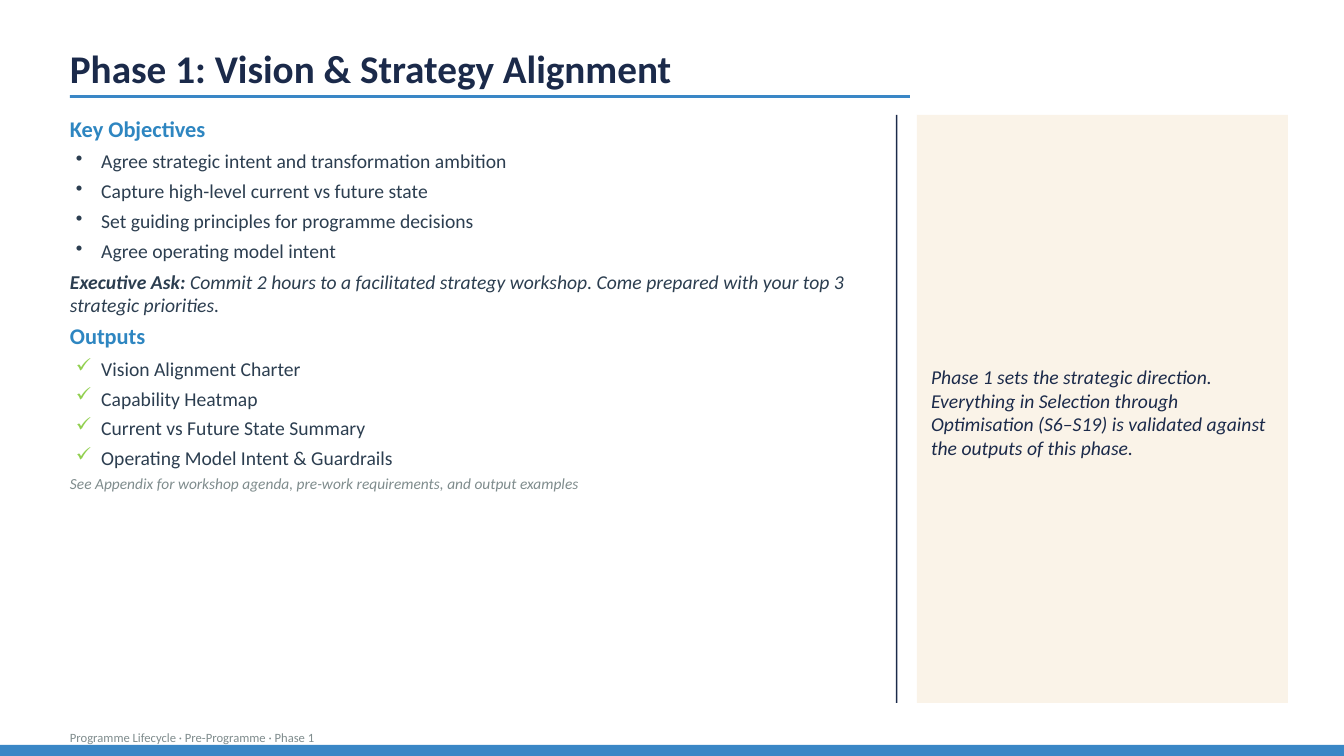
from pptx import Presentation
from pptx.dml.color import RGBColor
from pptx.enum.shapes import MSO_SHAPE
from pptx.enum.text import MSO_ANCHOR, PP_ALIGN
from pptx.util import Inches, Pt
from lxml.etree import SubElement
from pptx.oxml.ns import qn

NAVY = RGBColor(0x1B, 0x2A, 0x4A)
BLUE = RGBColor(0x3A, 0x87, 0xC6)
HEAD = RGBColor(0x2E, 0x86, 0xC1)
INK = RGBColor(0x2C, 0x3E, 0x50)
GREY = RGBColor(0x7F, 0x8C, 0x8D)
CREAM = RGBColor(0xFA, 0xF3, 0xE8)
GREEN = RGBColor(0x92, 0xD0, 0x50)

WIDTH, HEIGHT = Inches(13.333), Inches(7.5)
COLS, ROWS = 96, 54
LEFT, TOP, DEPTH = 5, 8.2, 42

GOALS = [
    "Agree strategic intent and transformation ambition",
    "Capture high-level current vs future state",
    "Set guiding principles for programme decisions",
    "Agree operating model intent",
]
OUTPUTS = [
    "Vision Alignment Charter",
    "Capability Heatmap",
    "Current vs Future State Summary",
    "Operating Model Intent & Guardrails",
]


class Page:
    """Draws styled elements on one slide, placed by grid columns and rows."""

    def __init__(self, deck, face="Calibri"):
        self.slide = deck.slides.add_slide(deck.slide_layouts[6])
        self.face = face

    def place(self, col, row, wide, high):
        across, down = WIDTH / COLS, HEIGHT / ROWS
        return [round(n) for n in (col * across, row * down, wide * across, high * down)]

    def frame(self, shape, anchor, insets=(0, 0, 0, 0)):
        frame = shape.text_frame
        frame.word_wrap = True
        frame.vertical_anchor = anchor
        (frame.margin_left, frame.margin_top,
         frame.margin_right, frame.margin_bottom) = map(Inches, insets)
        return frame

    def box(self, *spot, anchor=MSO_ANCHOR.TOP):
        return self.frame(self.slide.shapes.add_textbox(*self.place(*spot)), anchor)

    def bar(self, *spot, fill):
        bar = self.slide.shapes.add_shape(MSO_SHAPE.RECTANGLE, *self.place(*spot))
        bar.shadow.inherit = False
        bar.fill.solid()
        bar.fill.fore_color.rgb = fill
        bar.line.fill.background()
        return bar

    def line(self, frame, text, size, color, bold=False, italic=False, after=0, mark=None, tint=None):
        first = frame.paragraphs[0]
        para = frame.add_paragraph() if first.runs else first
        para.add_run().text = text
        if mark:
            self.bullet(para, mark, tint)
        para.alignment = PP_ALIGN.LEFT
        para.space_after = Pt(after)
        font = para.font
        font.name, font.size, font.bold, font.italic = self.face, Pt(size), bold, italic
        font.color.rgb = color
        return para

    def bullet(self, para, mark, tint):
        para.line_spacing = 1.15
        props = para._p.get_or_add_pPr()
        props.set("marL", str(Inches(0.31)))
        props.set("indent", str(Inches(-0.25)))
        if tint:
            SubElement(SubElement(props, qn("a:buClr")), qn("a:srgbClr")).set("val", str(tint))
        SubElement(props, qn("a:buChar")).set("char", mark)

    def items(self, frame, title, lines, mark, tint=None):
        self.line(frame, title, 16, HEAD, bold=True, after=3)
        for text in lines:
            gap = 3 if text == lines[-1] else 2
            self.line(frame, text, 14, INK, after=gap, mark=mark, tint=tint)


def main():
    deck = Presentation()
    deck.slide_width, deck.slide_height = WIDTH, HEIGHT
    page = Page(deck)

    title = page.box(LEFT, 2, 86, 4.5, anchor=MSO_ANCHOR.BOTTOM)
    page.line(title, "Phase 1: Vision & Strategy Alignment", 28, NAVY, bold=True)
    page.bar(LEFT, 6.8, 60, 0.2, fill=BLUE)

    body = page.box(LEFT, TOP, 57, DEPTH)
    page.items(body, "Key Objectives", GOALS, "•")
    ask = page.line(body, "Executive Ask: ", 14, INK, italic=True, after=4)
    ask.space_before = Pt(2)
    ask.runs[0].font.bold = True
    ask.add_run().text = ("Commit 2 hours to a facilitated strategy workshop. "
                          "Come prepared with your top 3 strategic priorities.")
    page.items(body, "Outputs", OUTPUTS, "✓", GREEN)
    page.line(body, "See Appendix for workshop agenda, pre-work requirements, and output examples",
              11, GREY, italic=True)

    page.bar(64, TOP, 0.1, DEPTH, fill=NAVY)
    panel = page.bar(65.5, TOP, 26.5, DEPTH, fill=CREAM)
    note = page.frame(panel, MSO_ANCHOR.MIDDLE, (0.14, 0.21, 0.14, 0.14))
    page.line(note, "Phase 1 sets the strategic direction. Everything in Selection through "
              "Optimisation (S6–S19) is validated against the outputs of this phase.",
              14, NAVY, italic=True)

    foot = page.box(LEFT, 51.2, 50, 2, anchor=MSO_ANCHOR.BOTTOM)
    page.line(foot, "Programme Lifecycle · Pre-Programme · Phase 1", 9, GREY)
    page.bar(0, 53.2, COLS, 0.8, fill=BLUE)

    deck.save("out.pptx")


if __name__ == "__main__":
    main()
